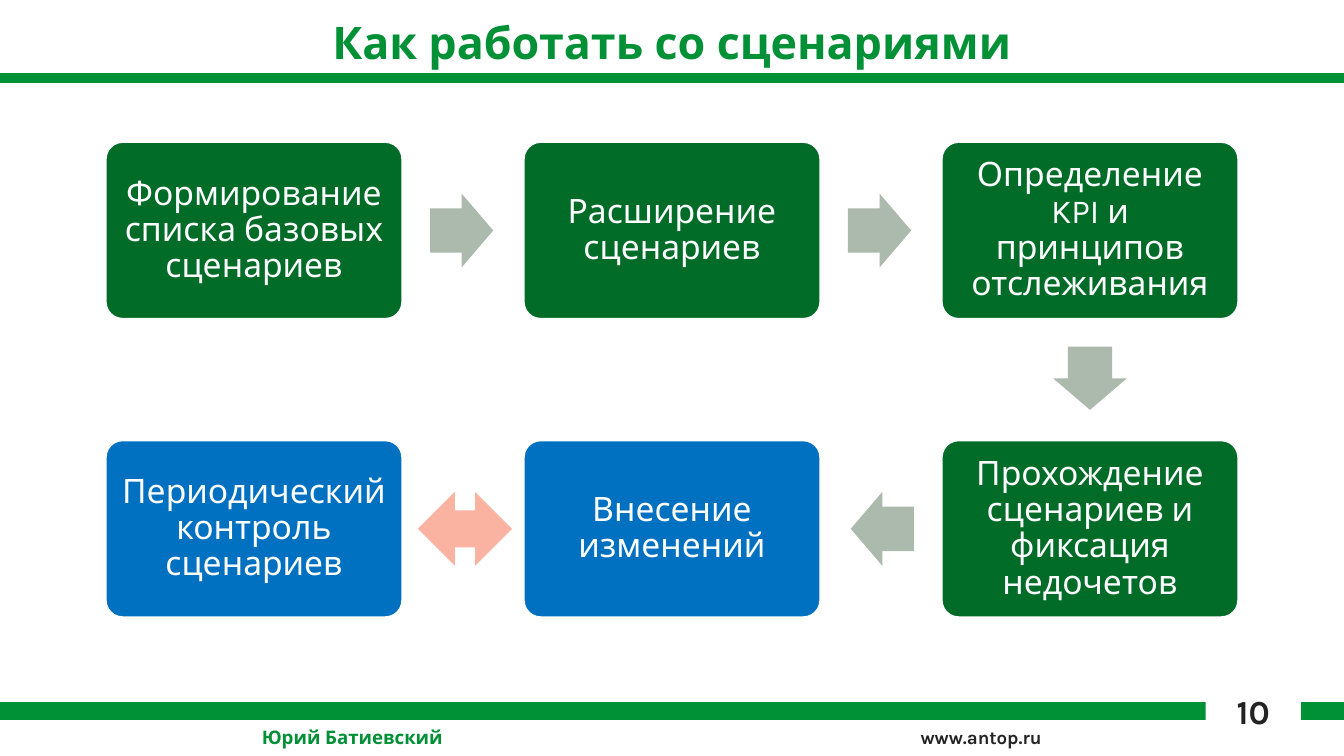
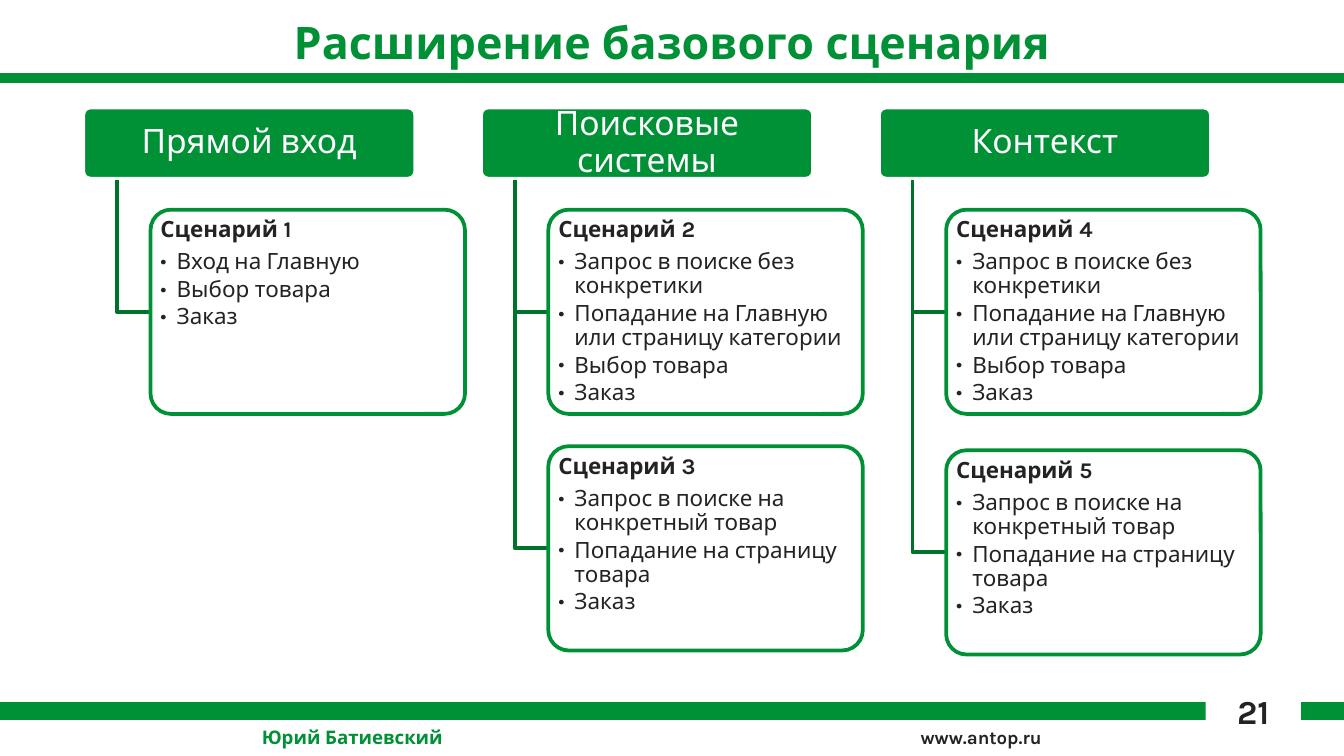
"""Build two slides on working with site usage scenarios."""
import pptx
import pptx.dml.color
import pptx.enum.shapes
import pptx.enum.text
import pptx.oxml
import pptx.oxml.ns
import pptx.util
from lxml import etree

Inches = pptx.util.Inches
Pt = pptx.util.Pt
SHAPE = pptx.enum.shapes.MSO_SHAPE
ALIGN = pptx.enum.text.PP_ALIGN
ANCHOR = pptx.enum.text.MSO_ANCHOR

FONT = "Karla"
GREEN, DARK_GREEN, LINK_GREEN = "009036", "006C28", "00732B"
BLUE, GREY, PINK = "0070C0", "ABBAAD", "FAB3A0"
INK, WHITE = "232323", "FFFFFF"
SLIDE_W = 10
SLIDE_H = SLIDE_W * 9 / 16

STEP_W, STEP_H = 2.22, 1.33
STEP_DX, STEP_DY = 3.11, 2.22
ARROW_W, ARROW_H = 0.47, 0.55
STEPS = [
    (0, 0, DARK_GREEN, "Формирование списка базовых сценариев"),
    (1, 0, DARK_GREEN, "Расширение сценариев"),
    (2, 0, DARK_GREEN, "Определение KPI и принципов отслеживания"),
    (2, 1, DARK_GREEN, "Прохождение сценариев и фиксация недочетов"),
    (1, 1, BLUE, "Внесение изменений"),
    (0, 1, BLUE, "Периодический контроль сценариев"),
]

HEAD_W, HEAD_H = 2.47, 0.53
CARD_W, CARD_H = 2.34, 1.52
BRANCH_DX = 2.96
GENERAL = ["Запрос в поиске без конкретики",
           "Попадание на Главную или страницу категории",
           "Выбор товара", "Заказ"]
SPECIFIC = ["Запрос в поиске на конкретный товар",
            "Попадание на страницу товара", "Заказ"]
BRANCHES = [
    ("Прямой вход", [
        (0.76, "Сценарий 1", ["Вход на Главную", "Выбор товара", "Заказ"])]),
    ("Поисковые системы", [
        (0.76, "Сценарий 2", GENERAL), (2.52, "Сценарий 3", SPECIFIC)]),
    ("Контекст", [
        (0.76, "Сценарий 4", GENERAL), (2.55, "Сценарий 5", SPECIFIC)]),
]


def rgb(value):
    """Turn a hex string into a colour."""
    return pptx.dml.color.RGBColor.from_string(value)


def style(p, size, color, bold=False, align=ALIGN.LEFT, spacing=None, after=None):
    """Format a paragraph and its runs."""
    p.alignment = align
    if spacing:
        p.line_spacing = spacing
    if after:
        p.space_after = Pt(after)
    for r in p.runs:
        r.font.name = FONT
        r.font.size = Pt(size)
        r.font.bold = bold
        r.font.color.rgb = rgb(color)


def set_frame(tf, x_inset, y_inset, anchor):
    """Set wrapping, insets and vertical anchor of a text frame."""
    tf.word_wrap = True
    tf.vertical_anchor = anchor
    tf.margin_left = tf.margin_right = Inches(x_inset)
    tf.margin_top = tf.margin_bottom = Inches(y_inset)


def add_text(s, x, y, w, h, text, size, color, align=ALIGN.LEFT, anchor=ANCHOR.TOP):
    """Add a one-line bold text box."""
    sp = s.shapes.add_textbox(Inches(x), Inches(y), Inches(w), Inches(h))
    set_frame(sp.text_frame, 0.1, 0.05, anchor)
    sp.text_frame.text = text
    style(sp.text_frame.paragraphs[0], size, color, True, align)
    return sp


def add_block(s, kind, x, y, w, h, fill, line=None, adjust=()):
    """Add a filled preset shape."""
    sp = s.shapes.add_shape(kind, Inches(x), Inches(y), Inches(w), Inches(h))
    sp.shadow.inherit = False
    sp.fill.solid()
    sp.fill.fore_color.rgb = rgb(fill)
    if line:
        sp.line.color.rgb = rgb(line)
        sp.line.width = Pt(2)
    else:
        sp.line.fill.background()
    for i, value in enumerate(adjust):
        sp.adjustments[i] = value
    return sp


def add_label_box(s, x, y, w, h, fill, text, x_inset, y_inset):
    """Add a rounded box with a centred white label."""
    sp = add_block(s, SHAPE.ROUNDED_RECTANGLE, x, y, w, h, fill, WHITE, [0.1])
    set_frame(sp.text_frame, x_inset, y_inset, ANCHOR.MIDDLE)
    sp.text_frame.text = text
    style(sp.text_frame.paragraphs[0], 18, WHITE, False, ALIGN.CENTER, 0.9, 6.3)


def add_band(s, y, width):
    """Draw a green line across the slide."""
    line = s.shapes.add_connector(
        pptx.enum.shapes.MSO_CONNECTOR.STRAIGHT,
        0, Inches(y), Inches(SLIDE_W), Inches(y))
    line.line.color.rgb = rgb(GREEN)
    line.line.width = Pt(width)
    etree.SubElement(line._element.spPr, pptx.oxml.ns.qn("a:effectLst"))


def add_base(prs, title, number):
    """Add a slide with its title, bands and footer."""
    s = prs.slides.add_slide(prs.slide_layouts[6])
    add_band(s, 5.29, 10)
    add_band(s, 0.58, 5)
    add_text(s, 0.51, 0.16, 8.98, 0.3, title, 24, GREEN, ALIGN.CENTER, ANCHOR.MIDDLE)
    site = add_text(s, 6.72, 5.35, 2.46, 0.27, "www.antop.ru", 10, INK)
    site.text_frame.margin_left = Inches(0.13)
    add_text(s, 1.85, 5.35, 5.83, 0.18, "Юрий Батиевский", 10, GREEN)
    sp = add_block(s, SHAPE.RECTANGLE, 8.97, 5.08, 0.71, 0.54, WHITE)
    set_frame(sp.text_frame, 0.1, 0.02, ANCHOR.TOP)
    sp.text_frame.text = str(number)
    style(sp.text_frame.paragraphs[0], 18, INK, True, ALIGN.CENTER, 1.15)
    return s


def add_process(s, x, y):
    """Draw the step boxes and the arrows that join them."""
    for col, row, fill, text in STEPS:
        add_label_box(s, x + col * STEP_DX, y + row * STEP_DY,
                      STEP_W, STEP_H, fill, text, 0.07, 0.07)
    mid = (STEP_H - ARROW_H) / 2
    arrows = [
        (2.42, mid, 0),
        (2.42 + STEP_DX, mid, 0),
        (2 * STEP_DX + (STEP_W - ARROW_W) / 2, 1.49, 90),
        (5.55, STEP_DY + mid, 180),
    ]
    for dx, dy, angle in arrows:
        sp = add_block(s, SHAPE.RIGHT_ARROW, x + dx, y + dy,
                       ARROW_W, ARROW_H, GREY, adjust=[0.6, 0.5])
        sp.rotation = angle
    add_block(s, SHAPE.LEFT_RIGHT_ARROW, x + 2.33, y + STEP_DY + mid,
              0.7, ARROW_H, PINK)


def add_link(s, x, y, w, h):
    """Draw an elbow line down and to the right."""
    fb = s.shapes.build_freeform(Inches(x), Inches(y))
    fb.add_line_segments([(Inches(x), Inches(y + h)),
                          (Inches(x + w), Inches(y + h))], close=False)
    sp = fb.convert_to_shape()
    sp.shadow.inherit = False
    sp.fill.background()
    sp.line.color.rgb = rgb(LINK_GREEN)
    sp.line.width = Pt(2)


def add_bullet(p):
    """Give a paragraph a hanging bullet."""
    p.level = 1
    pPr = p._p.get_or_add_pPr()
    pPr.set("marL", str(Inches(0.12)))
    pPr.set("indent", str(-Inches(0.12)))
    etree.SubElement(pPr, pptx.oxml.ns.qn("a:buFont")).set("typeface", FONT)
    etree.SubElement(pPr, pptx.oxml.ns.qn("a:buChar")).set("char", "•")


def add_card(s, x, y, name, items):
    """Draw a scenario card with its bulleted steps."""
    sp = add_block(s, SHAPE.ROUNDED_RECTANGLE, x, y, CARD_W, CARD_H,
                   WHITE, GREEN, [0.1])
    color = sp._element.spPr.find(".//" + pptx.oxml.ns.qn("a:srgbClr"))
    etree.SubElement(color, pptx.oxml.ns.qn("a:alpha")).set("val", "90000")
    tf = sp.text_frame
    set_frame(tf, 0.03, 0.02, ANCHOR.TOP)
    tf.text = name
    style(tf.paragraphs[0], 12, INK, True, spacing=0.9, after=4.2)
    for item in items:
        p = tf.add_paragraph()
        p.text = item
        add_bullet(p)
        style(p, 12, INK, spacing=0.9, after=1.8)


def add_branch(s, x, y, head, cards):
    """Draw one entry point with its scenarios below."""
    add_label_box(s, x, y, HEAD_W, HEAD_H, GREEN, head, 0.04, 0.03)
    for dy, name, items in cards:
        add_link(s, x + 0.25, y + 0.54, 0.25, dy + CARD_H / 2 - 0.54)
        add_card(s, x + 0.5, y + dy, name, items)


def main():
    """Build and save the presentation."""
    prs = pptx.Presentation()
    prs.slide_width, prs.slide_height = Inches(SLIDE_W), Inches(SLIDE_H)
    s = add_base(prs, "Как работать со сценариями", 10)
    add_process(s, 0.78, 1.05)
    s = add_base(prs, "Расширение базового сценария", 21)
    for i, (head, cards) in enumerate(BRANCHES):
        add_branch(s, 0.62 + i * BRANCH_DX, 0.8, head, cards)
    prs.save("out.pptx")


if __name__ == "__main__":
    main()
